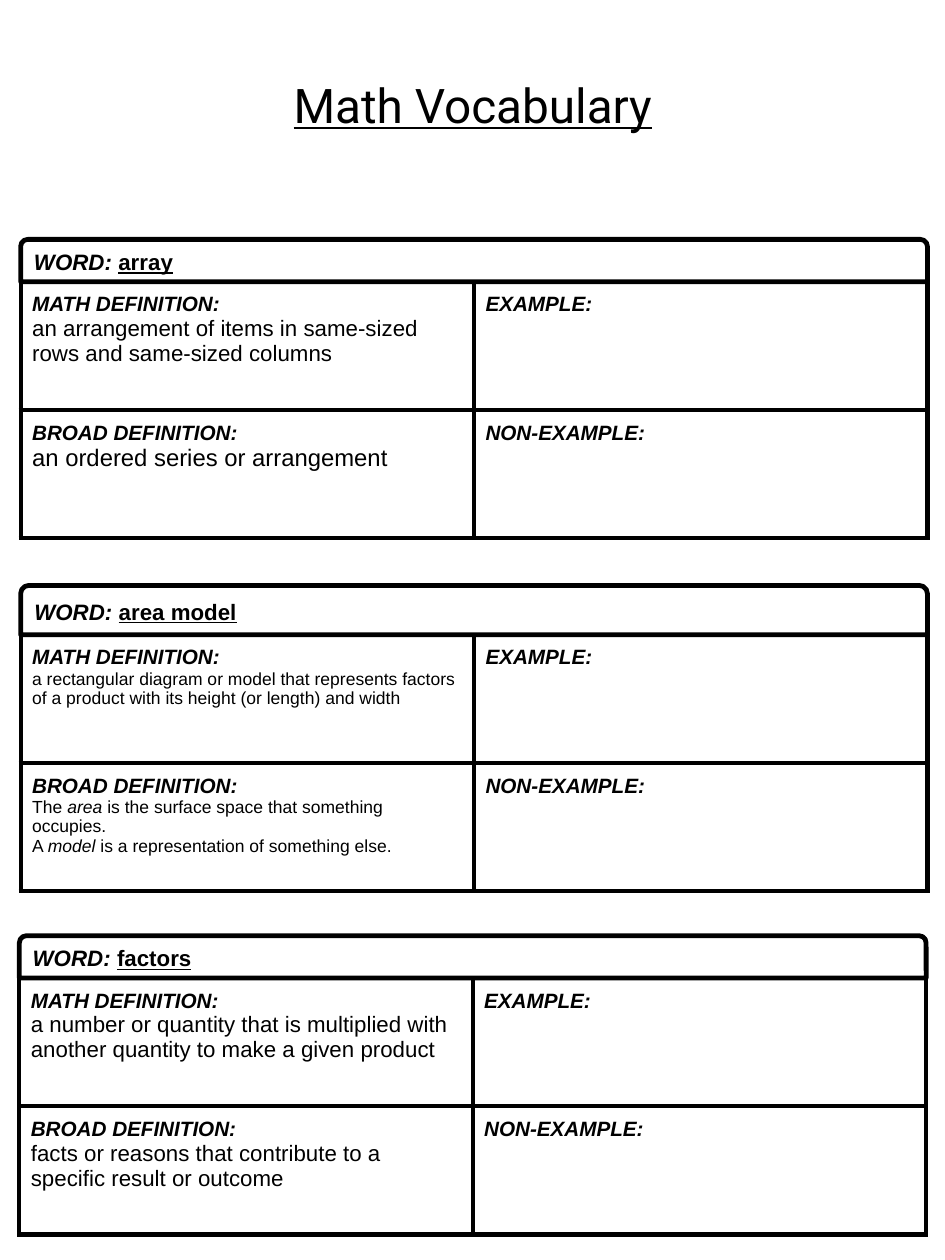
from lxml.etree import SubElement
from pptx import Presentation
from pptx.dml.color import RGBColor
from pptx.enum.shapes import MSO_SHAPE
from pptx.enum.text import MSO_ANCHOR, PP_ALIGN
from pptx.oxml.ns import qn
from pptx.util import Pt

# Content: each definition is (size, paragraphs), each paragraph a list of (text, italic)
TITLE = "Math Vocabulary"
CARDS = [
    {"word": "array", "left": 13, "top": 150.5, "header": 26.6,
     "math": (14, [[("an arrangement of items in same-sized rows and same-sized columns", False)]]),
     "broad": (15, [[("an ordered series or arrangement", False)]])},
    {"word": "area model", "left": 13, "top": 368, "header": 31,
     "math": (11, [[("a rectangular diagram or model that represents factors of a product "
                     "with its height (or length) and width", False)]]),
     "broad": (11, [[("The ", False), ("area", True),
                     (" is the surface space that something occupies.", False)],
                    [("A ", False), ("model", True),
                     (" is a representation of something else.", False)]])},
    {"word": "factors", "left": 12.2, "top": 588.2, "header": 26.6,
     "math": (14, [[("a number or quantity that is multiplied with another quantity "
                     "to make a given product", False)]]),
     "broad": (14, [[("facts or reasons that contribute to a specific result or outcome", False)]])},
]
BLACK, WHITE = "000000", "FFFFFF"
CARD_W, ROW_H, INSET, BORDER = 570, 80.6, 7.2, 3


def color(value):
    return RGBColor.from_string(value)


def add_run(p, text, size, bold=False, italic=False, underline=False, font="Arial"):
    r = p.add_run()
    r.text = text
    f = r.font
    f.name, f.size, f.color.rgb = font, Pt(size), color(BLACK)
    f.bold, f.italic, f.underline = bold, italic, underline


def set_margins(box):
    box.margin_left = box.margin_right = box.margin_top = box.margin_bottom = Pt(INSET)


def add_borders(cell):
    tcPr = cell._tc.get_or_add_tcPr()
    for i, side in enumerate(("lnL", "lnR", "lnT", "lnB")):
        ln = SubElement(tcPr, qn(f"a:{side}"), w=str(Pt(BORDER)))
        fill = SubElement(ln, qn("a:solidFill"))
        SubElement(fill, qn("a:srgbClr"), val=BLACK)
        tcPr.insert(i, ln)


def fill_cell(cell, label, size=0, paragraphs=()):
    set_margins(cell)
    cell.fill.background()
    add_borders(cell)
    tf = cell.text_frame
    add_run(tf.paragraphs[0], label, 13, bold=True, italic=True)
    for runs in paragraphs:
        p = tf.add_paragraph()
        for text, italic in runs:
            add_run(p, text, size, italic=italic)


def add_card(s, card):
    left, top, header = card["left"], card["top"], card["header"]

    # Definition grid
    table = s.shapes.add_table(2, 2, Pt(left), Pt(top + header),
                               Pt(CARD_W), Pt(2 * ROW_H)).table
    table.first_row = table.horz_banding = False
    for row in table.rows:
        row.height = Pt(ROW_H)
    fill_cell(table.cell(0, 0), "MATH DEFINITION:", *card["math"])
    fill_cell(table.cell(0, 1), "EXAMPLE:")
    fill_cell(table.cell(1, 0), "BROAD DEFINITION:", *card["broad"])
    fill_cell(table.cell(1, 1), "NON-EXAMPLE:")

    # Word header
    sp = s.shapes.add_shape(MSO_SHAPE.ROUND_2_SAME_RECTANGLE, Pt(left), Pt(top),
                            Pt(CARD_W), Pt(header))
    sp.shadow.inherit = False
    sp.fill.solid()
    sp.fill.fore_color.rgb = color(WHITE)
    sp.line.color.rgb = color(BLACK)
    sp.line.width = Pt(BORDER)
    tf = sp.text_frame
    set_margins(tf)
    tf.vertical_anchor = MSO_ANCHOR.MIDDLE
    p = tf.paragraphs[0]
    p.alignment = PP_ALIGN.LEFT
    add_run(p, "WORD: ", 14, bold=True, italic=True)
    add_run(p, card["word"], 14, bold=True, underline=True)


prs = Presentation()
prs.slide_width, prs.slide_height = Pt(594), Pt(792)
s = prs.slides.add_slide(prs.slide_layouts[6])

# Title
tf = s.shapes.add_textbox(Pt(46.8), Pt(40.3), Pt(501), Pt(62.6)).text_frame
tf.word_wrap = True
set_margins(tf)
p = tf.paragraphs[0]
p.alignment = PP_ALIGN.CENTER
add_run(p, TITLE, 30, underline=True, font="Roboto")

# Vocabulary cards
for card in CARDS:
    add_card(s, card)

prs.save("out.pptx")
